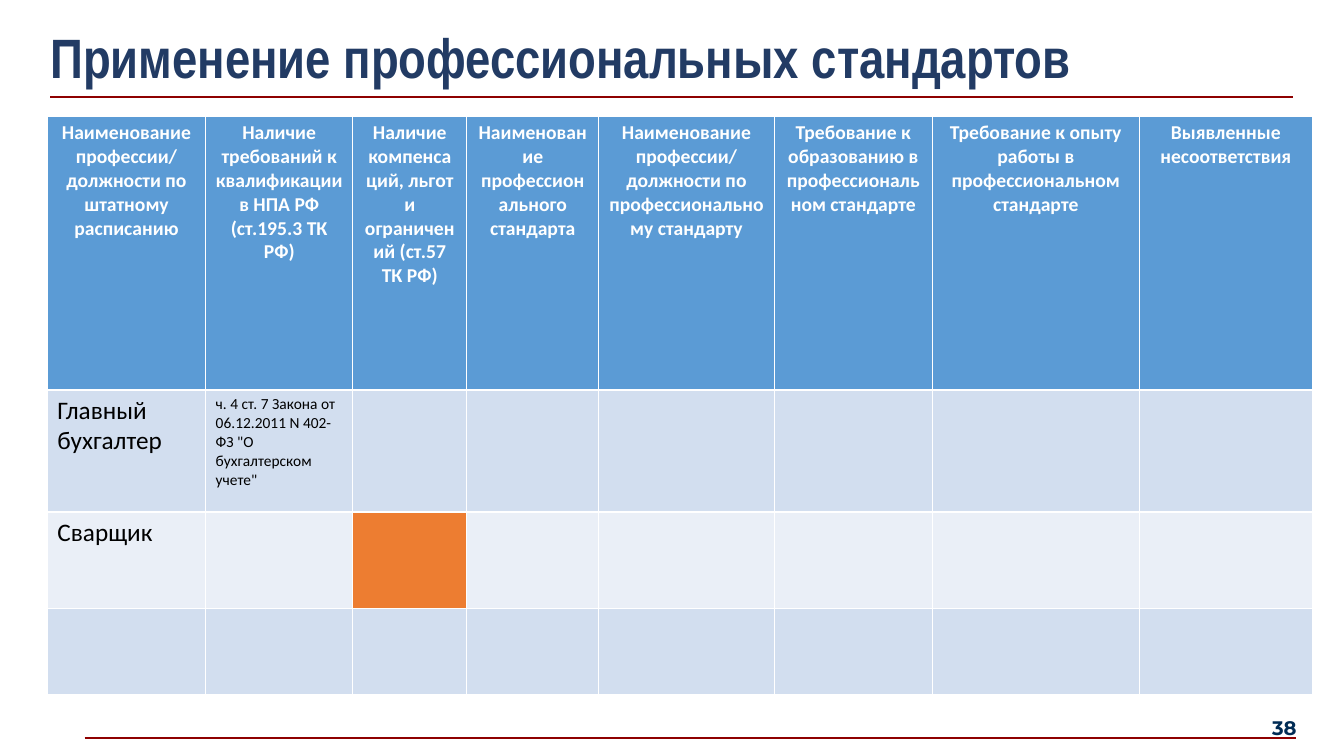
from lxml import etree
from pptx import Presentation
from pptx.dml.color import RGBColor
from pptx.enum import shapes, text
from pptx.oxml import ns
from pptx.util import Inches, Pt

# Content
TITLE = "Применение профессиональных стандартов"
PAGE = "38"
HEAD = [
    "Наименование профессии/\nдолжности по штатному расписанию",
    "Наличие требований к квалификации в НПА РФ (ст.195.3 ТК РФ)",
    "Наличие компенсаций, льгот и ограничений (ст.57 ТК РФ)",
    "Наименование профессионального стандарта",
    "Наименование профессии/\nдолжности по профессиональному стандарту",
    "Требование к образованию в профессиональном стандарте",
    "Требование к опыту работы в профессиональном стандарте",
    "Выявленные несоответствия",
]
BODY = [
    ["Главный бухгалтер",
     'ч. 4 ст. 7 Закона от 06.12.2011 N 402-ФЗ "О бухгалтерском учете"'],
    ["Сварщик"],
    [],
]
COLS = [1.57, 1.46, 1.13, 1.31, 1.74, 1.57, 2.05, 1.72]
ROWS = [2.72, 1.21, 0.96, 0.85]
RULES = [(0.84, 12.85, 7.32), (0.5, 12.82, 0.96)]
MARK = (2, 2)  # row and column of the highlighted cell

COLORS = {
    "rule": "8E0000", "title": "223B64", "page": "002C55",
    "head": "5B9BD5", "odd": "D2DEEF", "even": "EAEFF7",
    "mark": "ED7D31", "white": "FFFFFF", "black": "000000",
}
FONTS = {
    "title": {"name": "Arial Narrow", "size": Pt(39.6), "bold": True},
    "page": {"name": "Montserrat", "size": Pt(14), "bold": True},
    "head": {"name": "Calibri", "size": Pt(14), "bold": True},
    "job": {"name": "Calibri", "size": Pt(18), "bold": False},
    "law": {"name": "Calibri", "size": Pt(11), "bold": False},
}


def color(key):
    return RGBColor.from_string(COLORS[key])


def write(frame, words, font, ink, align=text.PP_ALIGN.LEFT):
    frame.text = words
    for par in frame.paragraphs:
        par.alignment = align
        for run in par.runs:
            for key, val in FONTS[font].items():
                setattr(run.font, key, val)
            run.font.color.rgb = color(ink)


def place(shape, left, top, width, height, pad):
    box = {"left": left, "top": top, "width": width, "height": height}
    for key, val in box.items():
        setattr(shape, key, Inches(val))
    frame = shape.text_frame
    form = {"margin_left": 0, "margin_right": 0,
            "margin_top": Inches(pad), "margin_bottom": Inches(pad),
            "word_wrap": True, "auto_size": text.MSO_AUTO_SIZE.NONE,
            "vertical_anchor": text.MSO_ANCHOR.MIDDLE}
    for key, val in form.items():
        setattr(frame, key, val)
    return frame


def main():
    deck = Presentation()
    deck.slide_width, deck.slide_height = Inches(13.33), Inches(7.5)
    slide = deck.slides.add_slide(deck.slide_layouts[5])

    # Rules under the title and at the foot
    for left, right, top in RULES:
        line = slide.shapes.add_connector(
            shapes.MSO_CONNECTOR.STRAIGHT,
            Inches(left), Inches(top), Inches(right), Inches(top))
        line.line.color.rgb = color("rule")
        line.line.width = Pt(1.5)
        etree.SubElement(line._element.spPr, ns.qn("a:effectLst"))

    # Title
    frame = place(slide.shapes.title, 0.5, 0.25, 12.32, 0.71, 0.05)
    write(frame, TITLE, "title", "title")
    frame.paragraphs[0].line_spacing = 0.9

    # Table: the default style draws the white borders
    table = slide.shapes.add_table(
        len(ROWS), len(COLS), Inches(0.47), Inches(1.15),
        Inches(sum(COLS)), Inches(sum(ROWS))).table
    for col, width in zip(table.columns, COLS):
        col.width = Inches(width)
    for row, height in zip(table.rows, ROWS):
        row.height = Inches(height)
    for r, words in enumerate([HEAD] + BODY):
        band = "head" if r == 0 else "odd" if r % 2 else "even"
        for c in range(len(COLS)):
            cell = table.cell(r, c)
            cell.fill.solid()
            cell.fill.fore_color.rgb = color("mark" if (r, c) == MARK else band)
            if c >= len(words):
                continue
            if r == 0:
                write(cell.text_frame, words[c], "head", "white",
                      text.PP_ALIGN.CENTER)
            else:
                write(cell.text_frame, words[c], "law" if c else "job", "black")

    # Page number
    note = slide.shapes.add_textbox(0, 0, 0, 0)
    frame = place(note, 12.27, 7.02, 0.59, 0.4, 0)
    write(frame, PAGE, "page", "page", text.PP_ALIGN.RIGHT)

    deck.save("out.pptx")


if __name__ == "__main__":
    main()
